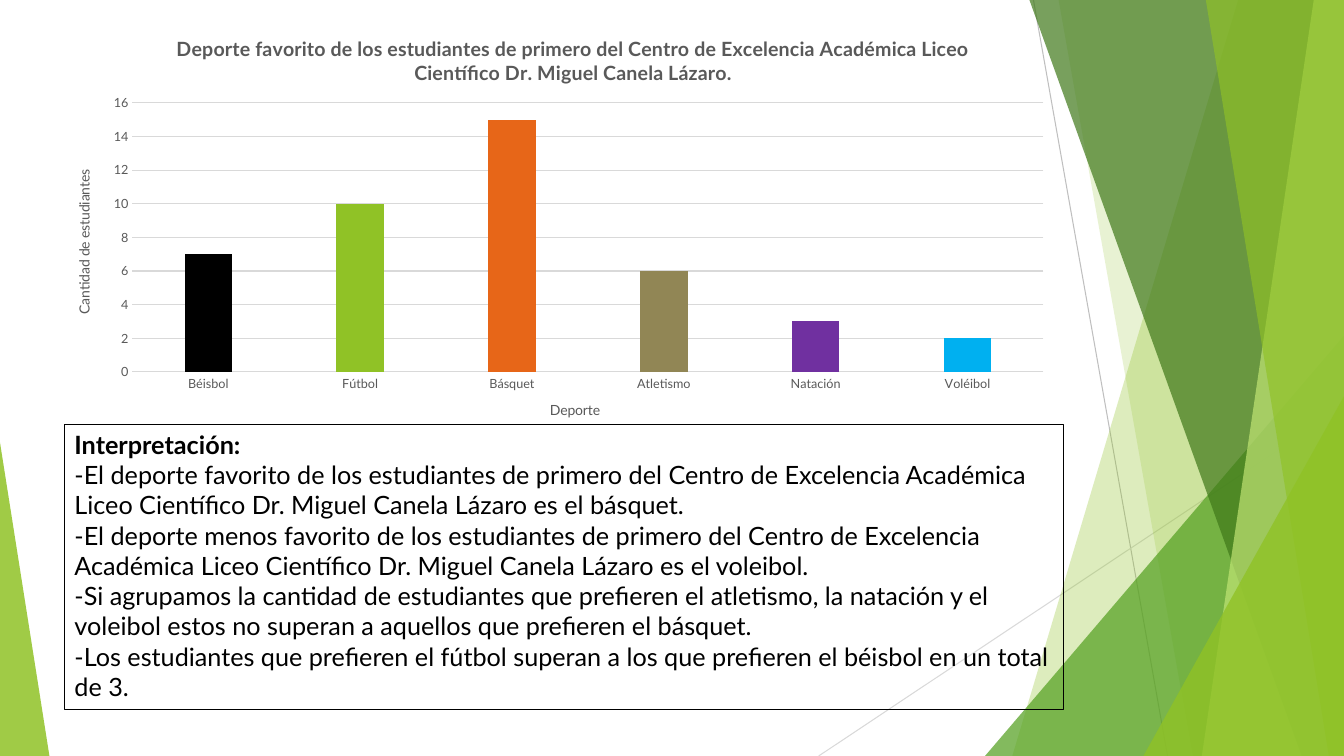
from dataclasses import dataclass
from lxml import etree
from pptx import Presentation
from pptx.chart.data import CategoryChartData
from pptx.dml.color import RGBColor
from pptx.enum.chart import XL_CHART_TYPE as ChartType, XL_TICK_MARK as TickMark
from pptx.enum.shapes import MSO_CONNECTOR as Connector, MSO_SHAPE as Shape
from pptx.enum.text import MSO_ANCHOR as Anchor, PP_ALIGN as Align
from pptx.oxml.ns import qn
from pptx.util import Inches, Pt


@dataclass(frozen=True)
class Theme:
    font: str = "Lato"
    ink: str = "000000"
    muted: str = "595959"
    rule: str = "D9D9D9"
    dark_rule: str = "BFBFBF"
    lime: str = "90C226"
    pale_lime: str = "C0E474"
    green: str = "54A021"
    forest: str = "3F7819"
    hairline: float = 0.75
    body_size: float = 18
    title_size: float = 14
    axis_title_size: float = 10
    label_size: float = 9


@dataclass(frozen=True)
class Box:
    left: float
    top: float
    width: float
    height: float

    @property
    def right(self):
        return self.left + self.width

    @property
    def bottom(self):
        return self.top + self.height

    def inches(self):
        return [Inches(v) for v in (self.left, self.top, self.width, self.height)]


THEME = Theme()
SCHOOL = "Centro de Excelencia Académica Liceo Científico Dr. Miguel Canela Lázaro"
FINDINGS = [
    f"-El deporte favorito de los estudiantes de primero del {SCHOOL} es el básquet.",
    f"-El deporte menos favorito de los estudiantes de primero del {SCHOOL} es el voleibol.",
    "-Si agrupamos la cantidad de estudiantes que prefieren el atletismo, la natación y el "
    "voleibol estos no superan a aquellos que prefieren el básquet.",
    "-Los estudiantes que prefieren el fútbol superan a los que prefieren el béisbol en un total de 3.",
]
SPORTS = [
    ("Béisbol", 7, THEME.ink),
    ("Fútbol", 10, THEME.lime),
    ("Básquet", 15, "E76618"),
    ("Atletismo", 6, "918655"),
    ("Natación", 3, "7030A0"),
    ("Voléibol", 2, "00B0F0"),
]


def apply(target, values):
    for name, value in values.items():
        setattr(target, name, value)


def style_font(font, size, color, bold=False):
    apply(font, {"name": THEME.font, "size": Pt(size), "bold": bold})
    font.color.rgb = RGBColor.from_string(color)


def style_line(line, color):
    line.color.rgb = RGBColor.from_string(color)
    line.width = Pt(THEME.hairline)


def paint(shape, color, opacity):
    shape.shadow.inherit = False
    shape.fill.solid()
    shape.fill.fore_color.rgb = RGBColor.from_string(color)
    shape.line.fill.background()
    tint = shape.fill._xPr.find(".//" + qn("a:srgbClr"))
    etree.SubElement(tint, qn("a:alpha")).set("val", str(opacity * 1000))


def add_ray(slide, start, end, color):
    ray = slide.shapes.add_connector(Connector.STRAIGHT, *[Inches(v) for v in start + end])
    style_line(ray.line, color)
    etree.SubElement(ray._element.spPr, qn("a:effectLst"))


def add_band(slide, box, top_inset, bottom_inset, color, opacity):
    corners = [
        (box.right - top_inset, box.top),
        (box.right, box.top),
        (box.right, box.bottom),
        (box.right - bottom_inset, box.bottom),
    ]
    points = [(Inches(x), Inches(y)) for x, y in corners]
    outline = slide.shapes.build_freeform(*points[0])
    outline.add_line_segments(points[1:], close=True)
    paint(outline.convert_to_shape(), color, opacity)


def add_wedge(slide, box, apex, color, opacity):
    wedge = slide.shapes.add_shape(Shape.ISOSCELES_TRIANGLE, *box.inches())
    wedge.adjustments[0] = apex
    paint(wedge, color, opacity)


def add_right_facets(slide, box):
    def corner_wedge(width, height, color, opacity):
        corner = Box(box.right - width, box.bottom - height, width, height)
        add_wedge(slide, corner, 1, color, opacity)

    add_ray(slide, (box.left + 2.13, box.top), (box.left + 3.46, box.bottom), THEME.dark_rule)
    add_ray(slide, (box.right, box.top + 4.03), (box.left, box.bottom), THEME.rule)
    add_band(slide, box, 1.05, 3.29, THEME.lime, 30)
    add_band(slide, box, 2.83, 1.5, THEME.lime, 20)
    corner_wedge(3.56, 4.17, THEME.green, 72)
    add_band(slide, box, 3.12, 0.42, THEME.forest, 70)
    add_band(slide, box, 0.3, 1.41, THEME.pale_lime, 70)
    add_band(slide, box, 1.37, 0.15, THEME.lime, 65)
    corner_wedge(1.99, 3.57, THEME.lime, 80)


def add_interpretation(slide, box):
    panel = slide.shapes.add_shape(Shape.RECTANGLE, *box.inches())
    panel.shadow.inherit = False
    panel.fill.background()
    style_line(panel.line, THEME.ink)
    frame = panel.text_frame
    apply(frame, {"word_wrap": True, "vertical_anchor": Anchor.TOP})
    for index, text in enumerate(["Interpretación:"] + FINDINGS):
        paragraph = frame.add_paragraph() if index else frame.paragraphs[0]
        paragraph.alignment = Align.LEFT
        run = paragraph.add_run()
        run.text = text
        style_font(run.font, THEME.body_size, THEME.ink, bold=index == 0)


def set_layout(element, index, target=None, **fractions):
    for old in element.findall(qn("c:layout")):
        element.remove(old)
    layout = etree.Element(qn("c:layout"))
    manual = etree.SubElement(layout, qn("c:manualLayout"))
    settings = {"layoutTarget": target} if target else {}
    settings |= {"xMode": "edge", "yMode": "edge", **fractions}
    for name, value in settings.items():
        etree.SubElement(manual, qn(f"c:{name}")).set("val", str(value))
    element.insert(index, layout)


def write_title(title, text, size, x, y, bold=False):
    title.text_frame.text = text
    style_font(title.text_frame.paragraphs[0].runs[0].font, size, THEME.muted, bold)
    set_layout(title._element, 1, x=x, y=y)


def add_sports_chart(slide, box):
    data = CategoryChartData()
    data.categories = [name for name, _, _ in SPORTS]
    data.add_series("Series 1", [count for _, count, _ in SPORTS])
    chart = slide.shapes.add_chart(ChartType.COLUMN_CLUSTERED, *box.inches(), data).chart
    style_font(chart.font, THEME.axis_title_size, THEME.ink)
    apply(chart, {"has_legend": False, "has_title": True})
    headline = f"Deporte favorito de los estudiantes de primero del {SCHOOL}."
    write_title(chart.chart_title, headline, THEME.title_size, 0.12, 0.04, bold=True)

    plot = chart.plots[0]
    apply(plot, {"gap_width": 219, "overlap": -27, "vary_by_categories": False})
    columns = plot.series[0]
    for index, (_, _, color) in enumerate(SPORTS):
        fill = columns.points[index].format.fill
        fill.solid()
        fill.fore_color.rgb = RGBColor.from_string(color)

    sports, students = chart.category_axis, chart.value_axis
    for axis in (sports, students):
        apply(axis, {"major_tick_mark": TickMark.NONE, "minor_tick_mark": TickMark.NONE})
        style_font(axis.tick_labels.font, THEME.label_size, THEME.muted)
    apply(students, {"minimum_scale": 0, "maximum_scale": 16, "major_unit": 2})
    style_line(sports.format.line, THEME.rule)
    students.format.line.fill.background()
    style_line(students.major_gridlines.format.line, THEME.rule)
    write_title(sports.axis_title, "Deporte", THEME.axis_title_size, 0.49, 0.9)
    write_title(students.axis_title, "Cantidad de estudiantes", THEME.axis_title_size, 0.02, 0.36)
    students.axis_title._element.find(".//" + qn("a:bodyPr")).set("rot", "-5400000")
    plot_area = chart._chartSpace.find(".//" + qn("c:plotArea"))
    set_layout(plot_area, 0, target="inner", x=0.08, y=0.21, w=0.9, h=0.63)


def main():
    deck = Presentation()
    apply(deck, {"slide_width": Inches(13.33), "slide_height": Inches(7.5)})
    slide = deck.slides.add_slide(deck.slide_layouts[6])
    add_right_facets(slide, Box(8.12, 0, 5.21, 7.5))
    add_wedge(slide, Box(0, 4.39, 0.49, 3.11), 0, THEME.lime, 85)
    add_interpretation(slide, Box(0.64, 4.21, 9.91, 2.83))
    add_sports_chart(slide, Box(0.51, 0.13, 10.04, 4.24))
    deck.save("out.pptx")


if __name__ == "__main__":
    main()
